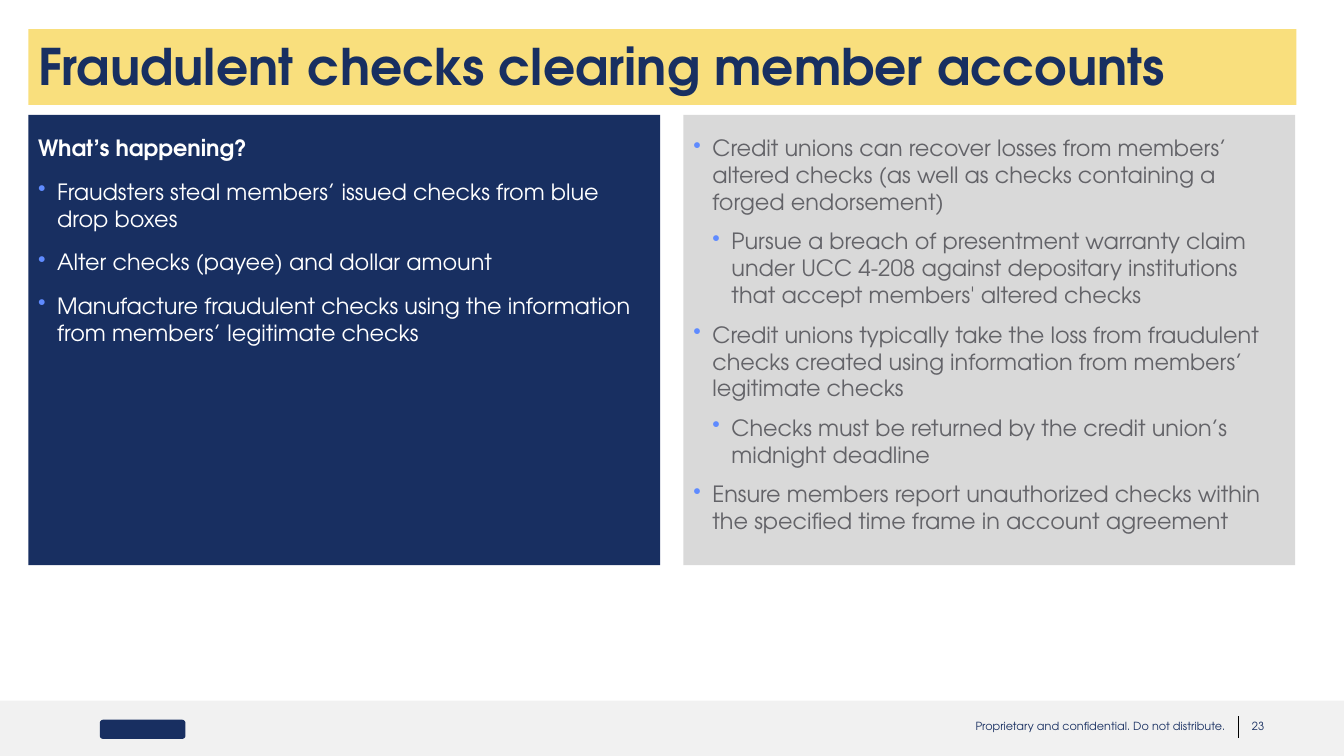
from lxml.etree import SubElement
from pptx import Presentation
from pptx.dml.color import RGBColor
from pptx.enum.shapes import MSO_CONNECTOR, MSO_SHAPE
from pptx.enum.text import MSO_ANCHOR, PP_ALIGN
from pptx.oxml.ns import qn
from pptx.util import Pt

FONT = "TeX Gyre Adventor"
COLORS = {
    "navy": "182F61",
    "yellow": "F9DF7D",
    "light gray": "D9D9D9",
    "footer gray": "F1F1F1",
    "text gray": "636368",
    "bullet blue": "5F8BFF",
    "white": "FFFFFF",
    "black": "000000",
}
SIDE_INDENT = 7.2
BULLET_STEP = 13.6

HAPPENING = [
    (0, "What’s happening?"),
    (1, "Fraudsters steal members’ issued checks from blue drop boxes"),
    (1, "Alter checks (payee) and dollar amount"),
    (1, "Manufacture fraudulent checks using the information from members’ legitimate checks"),
]
RECOVERY = [
    (1, "Credit unions can recover losses from members’ altered checks "
        "(as well as checks containing a forged endorsement)"),
    (2, "Pursue a breach of presentment warranty claim under UCC 4-208 against "
        "depositary institutions that accept members' altered checks"),
    (1, "Credit unions typically take the loss from fraudulent checks created "
        "using information from members’ legitimate checks"),
    (2, "Checks must be returned by the credit union’s midnight deadline"),
    (1, "Ensure members report unauthorized checks within the specified time "
        "frame in account agreement"),
]


def color(name):
    return RGBColor.from_string(COLORS[name])


def add_block(page, box, fill, shape=MSO_SHAPE.RECTANGLE):
    """Add a plain filled shape without line or shadow."""
    block = page.shapes.add_shape(shape, *map(Pt, box))
    block.shadow.inherit = False
    block.fill.solid()
    block.fill.fore_color.rgb = color(fill)
    block.line.fill.background()
    return block


def set_frame(shape, left=0, top=0, right=0):
    frame = shape.text_frame
    frame.word_wrap = True
    frame.vertical_anchor = MSO_ANCHOR.TOP
    frame.margin_left, frame.margin_top = Pt(left), Pt(top)
    frame.margin_right, frame.margin_bottom = Pt(right), Pt(0)
    return frame


def style(para, size, ink, bold=False):
    para.alignment = PP_ALIGN.LEFT
    para.font.name = FONT
    para.font.size = Pt(size)
    para.font.bold = bold
    para.font.color.rgb = color(ink)


def add_bullet(para, level):
    """Give the paragraph a hanging bullet at the level, counted from 1."""
    properties = para._p.get_or_add_pPr()
    properties.set("marL", str(Pt(level * BULLET_STEP)))
    properties.set("indent", str(-Pt(BULLET_STEP)))
    bullet_color = SubElement(properties, qn("a:buClr"))
    SubElement(bullet_color, qn("a:srgbClr")).set("val", COLORS["bullet blue"])
    SubElement(properties, qn("a:buChar")).set("char", "•")


def add_title(page, box, text):
    frame = set_frame(add_block(page, box, "yellow"), SIDE_INDENT, 4.3)
    para = frame.paragraphs[0]
    para.text = text
    style(para, 36, "navy", bold=True)


def add_panel(page, box, fill, ink, items, gap):
    """Fill a panel with (level, text) items; level 0 is a bold heading."""
    frame = set_frame(add_block(page, box, fill), SIDE_INDENT, 14, 14)
    for index, (level, text) in enumerate(items):
        para = frame.add_paragraph() if index else frame.paragraphs[0]
        para.text = text
        if index:
            para.space_before = Pt(gap)
        if level:
            add_bullet(para, level)
        style(para, 16, ink, bold=level == 0)


def add_footer(page, box):
    left, top, width, height = box
    add_block(page, box, "footer gray")
    add_block(page, (left + 71.3, top + 13.7, 61.2, 13.7), "navy", MSO_SHAPE.ROUNDED_RECTANGLE)
    divider_x = left + 884.4
    divider = page.shapes.add_connector(
        MSO_CONNECTOR.STRAIGHT, Pt(divider_x), Pt(top + 11.3), Pt(divider_x), Pt(top + 26.9))
    divider.line.color.rgb = color("black")
    divider.line.width = Pt(0.5)
    SubElement(divider._element.spPr, qn("a:effectLst"))
    notes = [
        (695.5, 182.2, 1.4, "Proprietary and confidential. Do not distribute."),
        (891.4, 16, 2.9, "23"),
    ]
    for offset, note_width, indent, text in notes:
        note = page.shapes.add_textbox(Pt(left + offset), Pt(top + 12.2), Pt(note_width), Pt(13))
        para = set_frame(note, indent, 1).paragraphs[0]
        para.text = text
        style(para, 8, "navy")


def main():
    deck = Presentation()
    deck.slide_width, deck.slide_height = Pt(960), Pt(540)
    page = deck.slides.add_slide(deck.slide_layouts[6])
    add_footer(page, (0, 500.4, 960, 39.6))
    add_title(page, (20.2, 20.9, 905.8, 54), "Fraudulent checks clearing member accounts")
    add_panel(page, (20.2, 82, 451.4, 321.8), "navy", "white", HAPPENING, 12)
    add_panel(page, (488.2, 82, 437, 321.8), "light gray", "text gray", RECOVERY, 9)
    deck.save("out.pptx")


if __name__ == "__main__":
    main()
